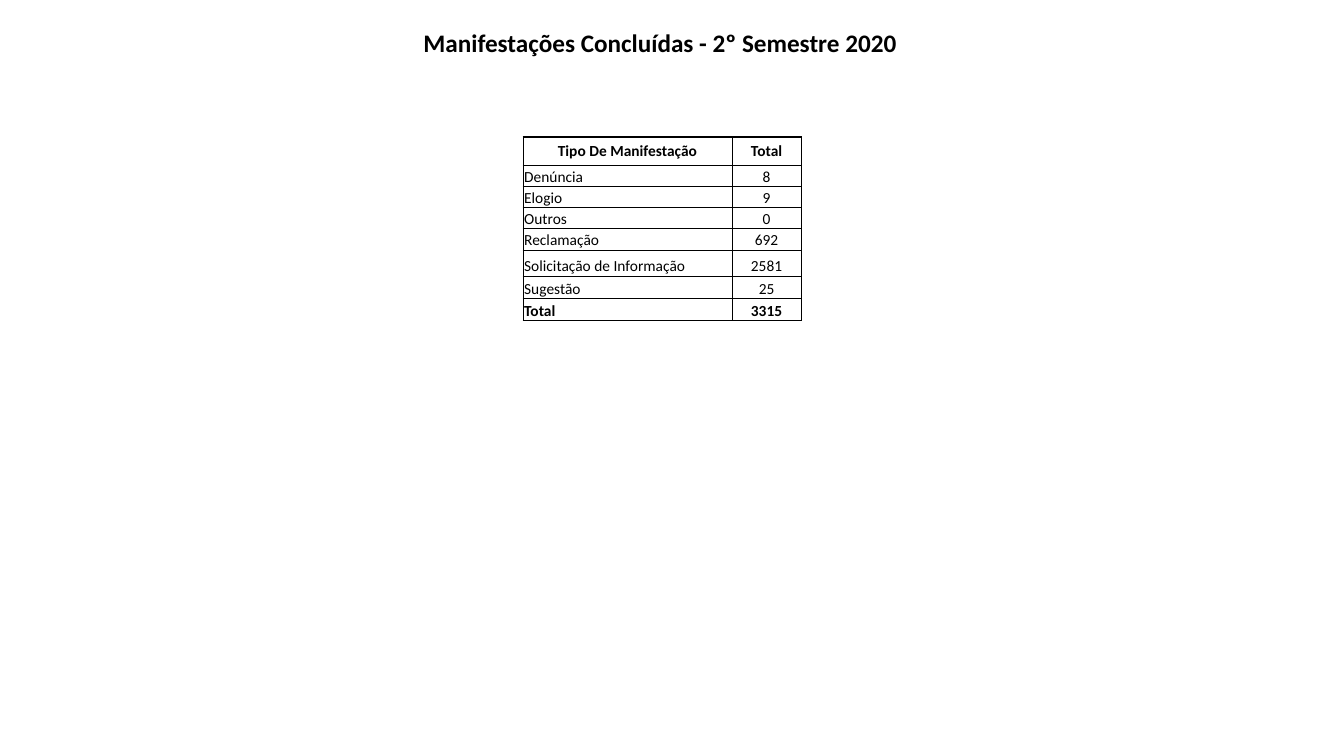
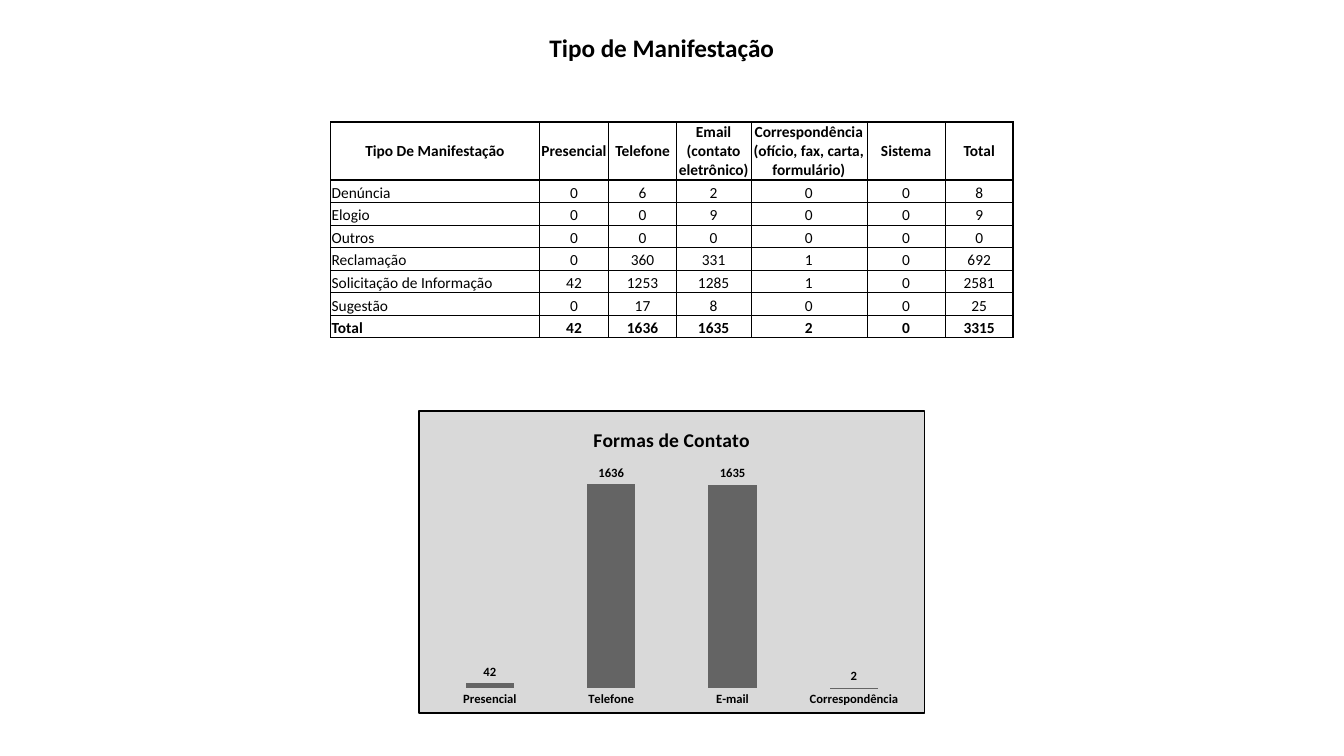
from lxml import etree
from pptx import Presentation
from pptx import util as u
from pptx.chart import data
from pptx.dml import color
from pptx.enum import chart as ch
from pptx.enum import text
from pptx.oxml import ns

COLS, ROWS = 133.33, 75
WIDE, HIGH = u.Inches(13.33), u.Inches(7.5)
FACE, INK, PAPER = "Calibri", "000000", "FFFFFF"
GREY, BAR = "D9D9D9", "646464"
THIN, THICK = 0.5, 1
KINDS = ["Denúncia", "Elogio", "Outros", "Reclamação",
         "Solicitação de Informação", "Sugestão", "Total"]
HEAD = "Tipo De Manifestação"


def across(n):
    return round(WIDE * n / COLS)


def down(n):
    return round(HIGH * n / ROWS)


def paint(code):
    return color.RGBColor.from_string(code)


def style(font, size, bold=True):
    font.name, font.size, font.bold = FACE, u.Pt(size), bold
    font.color.rgb = paint(INK)


def write(frame, words, size, bold=True, align=text.PP_ALIGN.LEFT):
    para = frame.paragraphs[0]
    para.alignment = align
    run = para.add_run()
    run.text = words
    style(run.font, size, bold)


def start(deck, words, left, top, width, height):
    slide = deck.slides.add_slide(deck.slide_layouts[5])
    title = slide.shapes.title
    title.left, title.top = across(left), down(top)
    title.width, title.height = across(width), down(height)
    frame = title.text_frame
    frame.word_wrap = True
    frame.auto_size = text.MSO_AUTO_SIZE.NONE
    frame.vertical_anchor = text.MSO_ANCHOR.MIDDLE
    write(frame, words, 18)
    return slide


def stroke(parent, tag, points):
    line = etree.SubElement(parent, ns.qn(tag), w=str(u.Pt(points)))
    fill = etree.SubElement(line, ns.qn("a:solidFill"))
    etree.SubElement(fill, ns.qn("a:srgbClr"), val=INK)


def edge(cell, row, col, last, end):
    sides = {
        "L": col == 0,
        "R": col == end,
        "T": row in (0, 1, last),
        "B": row in (0, last - 1, last),
    }
    props = cell._tc.get_or_add_tcPr()
    for side, strong in sides.items():
        stroke(props, "a:ln" + side, THICK if strong else THIN)


def fill_in(cell, words, head, bold, label):
    cell.margin_left = cell.margin_right = cell.margin_top = u.Inches(0.01)
    cell.margin_bottom = 0
    anchor = text.MSO_ANCHOR
    cell.vertical_anchor = anchor.MIDDLE if head else anchor.BOTTOM
    align = text.PP_ALIGN.LEFT if label else text.PP_ALIGN.CENTER
    write(cell.text_frame, words, 11, bold, align)
    cell.fill.solid()
    cell.fill.fore_color.rgb = paint(PAPER)


def grid(slide, left, top, widths, heights, rows):
    frame = slide.shapes.add_table(
        len(rows), len(widths), across(left), down(top),
        across(sum(widths)), down(sum(heights)))
    table = frame.table
    table.horz_banding = False
    for col, width in zip(table.columns, widths):
        col.width = across(width)
    for row, height in zip(table.rows, heights):
        row.height = down(height)
    last, end = len(rows) - 1, len(widths) - 1
    for r, row in enumerate(rows):
        for c, words in enumerate(row):
            cell = table.cell(r, c)
            edge(cell, r, c, last, end)
            fill_in(cell, str(words), r == 0, r in (0, last),
                    r > 0 and c == 0)


def frame_in(chart):
    props = etree.Element(ns.qn("c:spPr"))
    fill = etree.SubElement(props, ns.qn("a:solidFill"))
    etree.SubElement(fill, ns.qn("a:srgbClr"), val=GREY)
    stroke(props, "a:ln", THICK)
    chart.element.find(ns.qn("c:chart")).addnext(props)


def bars(slide, left, top, width, height, name, cats, vals):
    source = data.CategoryChartData()
    source.categories = cats
    source.add_series("Series 1", vals)
    chart = slide.shapes.add_chart(
        ch.XL_CHART_TYPE.COLUMN_CLUSTERED, across(left), down(top),
        across(width), down(height), source).chart
    style(chart.font, 10, False)
    frame_in(chart)
    chart.has_legend = False
    chart.has_title = True
    write(chart.chart_title.text_frame, name, 14, align=text.PP_ALIGN.CENTER)
    plot = chart.plots[0]
    plot.gap_width, plot.overlap = 150, -25
    plot.vary_by_categories = False
    fill = plot.series[0].format.fill
    fill.solid()
    fill.fore_color.rgb = paint(BAR)
    plot.has_data_labels = True
    labels = plot.data_labels
    labels.show_value = True
    labels.position = ch.XL_LABEL_POSITION.OUTSIDE_END
    style(labels.font, 9)
    axis = chart.category_axis
    axis.major_tick_mark = ch.XL_TICK_MARK.NONE
    axis.format.line.color.rgb = paint(GREY)
    axis.format.line.width = u.Pt(0.75)
    style(axis.tick_labels.font, 9)
    scale = chart.value_axis
    scale.has_major_gridlines = False
    scale.minimum_scale = 0
    scale.visible = False


def main():
    deck = Presentation()
    deck.slide_width, deck.slide_height = WIDE, HIGH

    heads = [HEAD, "Presencial", "Telefone", "Email (contato eletrônico)",
             "Correspondência (ofício, fax, carta, formulário)",
             "Sistema", "Total"]
    counts = [
        [0, 6, 2, 0, 0, 8],
        [0, 0, 9, 0, 0, 9],
        [0, 0, 0, 0, 0, 0],
        [0, 360, 331, 1, 0, 692],
        [42, 1253, 1285, 1, 0, 2581],
        [0, 17, 8, 0, 0, 25],
        [42, 1636, 1635, 2, 0, 3315],
    ]
    full = [[kind, *nums] for kind, nums in zip(KINDS, counts)]
    brief = [[row[0], row[-1]] for row in full]

    slide = start(deck, "Manifestações Concluídas - 2º Semestre 2020",
                  41, 2.2, 52.9, 4)
    grid(slide, 51.9, 13.6, [20.7, 6.9],
         [2.8] + [2.1] * 4 + [2.6, 2.2, 2.2], [[HEAD, "Total"]] + brief)

    slide = start(deck, "Tipo de Manifestação", 53.5, 2, 26.2, 5.5)
    grid(slide, 32.8, 12.1, [20.7, 6.9, 6.7, 7.4, 11.5, 7.8, 6.7],
         [5.1] + [2.24] * 7, [heads] + full)
    bars(slide, 41.5, 40.7, 50.3, 30.1, "Formas de Contato",
         ["Presencial", "Telefone", "E-mail", "Correspondência"],
         counts[-1][:4])

    deck.save("out.pptx")


if __name__ == "__main__":
    main()
